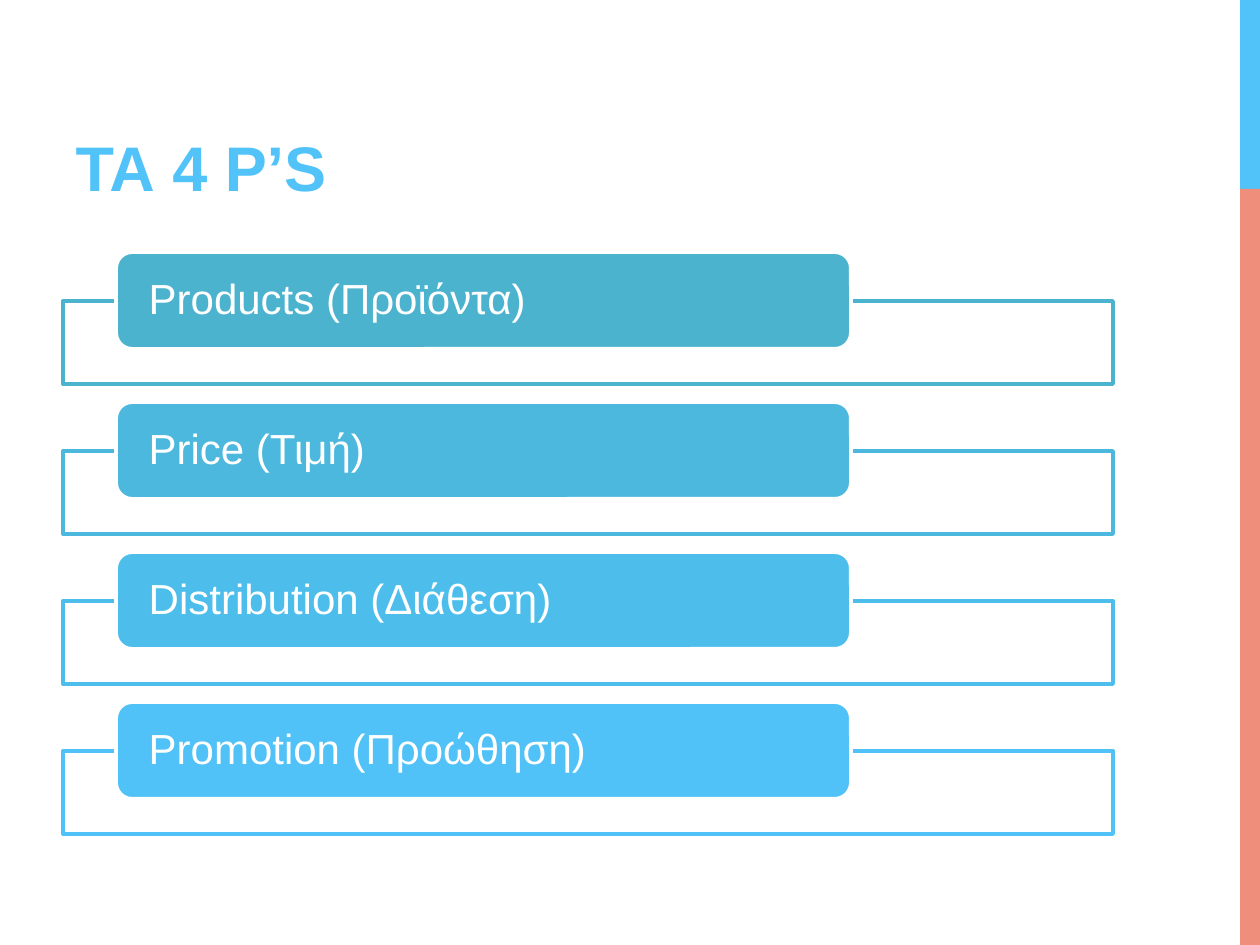
import pptx
import pptx.dml.color
import pptx.enum.shapes
import pptx.enum.text
import pptx.oxml
import pptx.util
import lxml.etree

SHAPE = pptx.enum.shapes.MSO_SHAPE
ANCHOR = pptx.enum.text.MSO_ANCHOR
COLORS = {
    "sky": "51C3F9",
    "coral": "EF8E7B",
    "white": "FFFFFF",
    "products": "4CB3CE",
    "price": "4CB8DD",
    "distribution": "4DBEEB",
    "promotion": "50C2F7",
}
ITEMS = [
    ("products", "Products (Προϊόντα)"),
    ("price", "Price (Τιμή)"),
    ("distribution", "Distribution (Διάθεση)"),
    ("promotion", "Promotion (Προώθηση)"),
]
ROW_PITCH = 150


def px(value):
    """Convert pixels, 126 to the inch, into EMU."""
    return round(value * 914400 / 126)


def add_block(kind, left, top, width, height, fill, line=None):
    block = page.shapes.add_shape(kind, px(left), px(top), px(width), px(height))
    block.shadow.inherit = False
    block.fill.solid()
    block.fill.fore_color.rgb = pptx.dml.color.RGBColor.from_string(COLORS[fill])
    if line:
        block.line.color.rgb = pptx.dml.color.RGBColor.from_string(COLORS[line])
        block.line.width = pptx.util.Pt(2.25)
    else:
        block.line.fill.background()
    return block


deck = pptx.Presentation()
deck.slide_width, deck.slide_height = px(1260), px(945)
page = deck.slides.add_slide(deck.slide_layouts[5])

# Side stripe
add_block(SHAPE.RECTANGLE, 1240, 0, 20, 189, "sky")
add_block(SHAPE.RECTANGLE, 1240, 189, 20, 756, "coral")

# Title
title = page.shapes.title
title.left, title.top, title.width, title.height = px(63), px(21), px(798), px(189)
title.text_frame.vertical_anchor = ANCHOR.BOTTOM
title.text_frame.word_wrap = True
para = title.text_frame.paragraphs[0]
para.alignment = pptx.enum.text.PP_ALIGN.LEFT
span = para.add_run()
span.text = "ΤΑ 4 P’S"
span.font.name = "Arial"
span.font.size = pptx.util.Pt(36)
span.font.bold = True
span.font.color.rgb = pptx.dml.color.RGBColor.from_string(COLORS["sky"])

# One open frame with a labelled card for each P
for row, (color, label) in enumerate(ITEMS):
    top = 252 + row * ROW_PITCH
    frame = add_block(SHAPE.RECTANGLE, 63, top + 49, 1050, 83, "white", color)
    white = frame.fill._xPr.find(".//" + pptx.oxml.ns.qn("a:srgbClr"))
    lxml.etree.SubElement(white, pptx.oxml.ns.qn("a:alpha"), val="90000")

    card = add_block(SHAPE.ROUNDED_RECTANGLE, 116, top, 735, 97, color, "white")
    card.adjustments[0] = 0.167
    box = card.text_frame
    box.word_wrap = True
    box.vertical_anchor = ANCHOR.MIDDLE
    box.margin_left = box.margin_right = px(28)
    box.margin_top = box.margin_bottom = 0
    para = box.paragraphs[0]
    para.alignment = pptx.enum.text.PP_ALIGN.LEFT
    para.line_spacing = 0.9
    span = para.add_run()
    span.text = label
    span.font.name = "Arial"
    span.font.size = pptx.util.Pt(24)
    span.font.color.rgb = pptx.dml.color.RGBColor.from_string(COLORS["white"])

deck.save("out.pptx")
